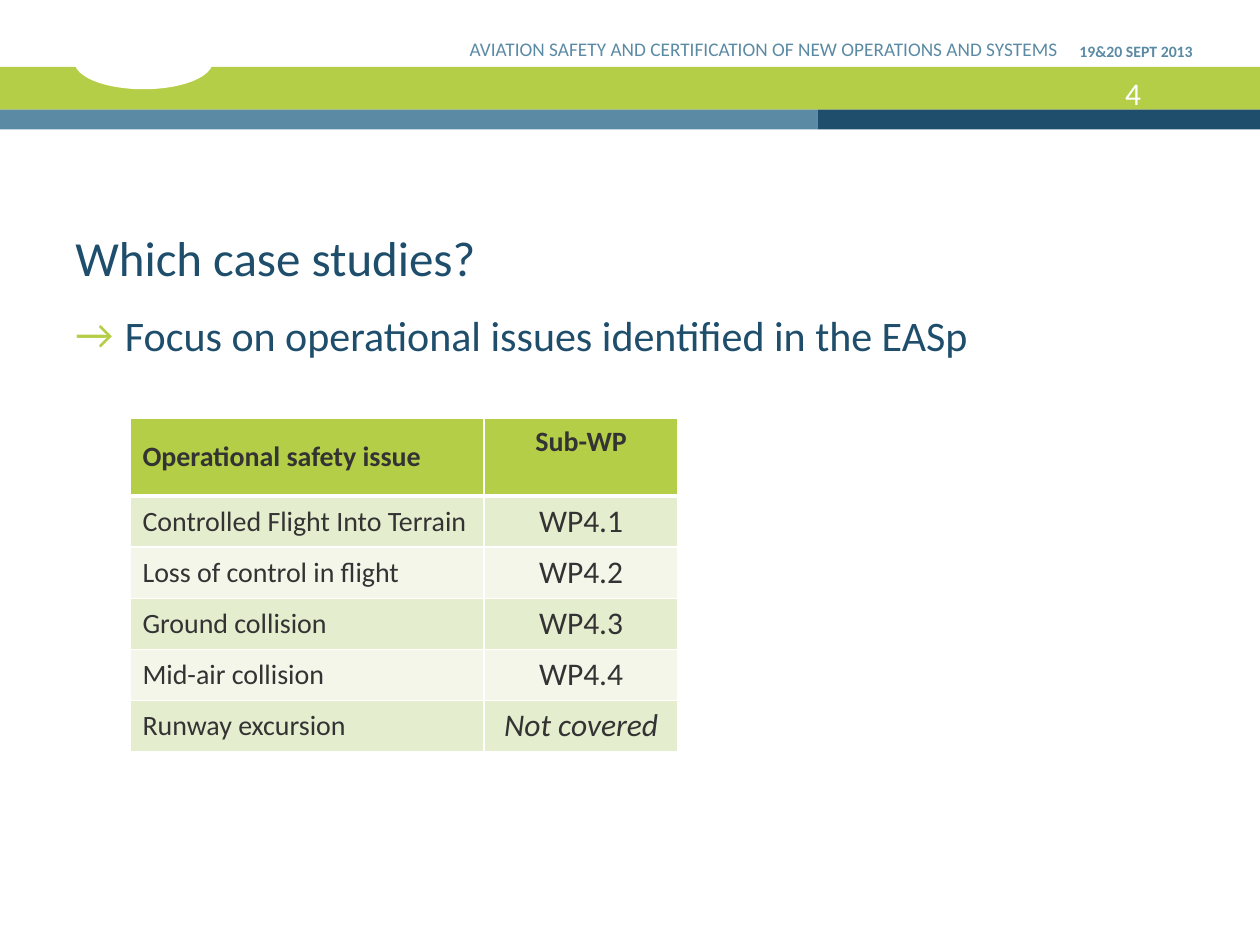
from lxml import etree
from pptx import Presentation, util as u
from pptx.dml.color import RGBColor
from pptx.enum import shapes, text
from pptx.oxml.ns import qn

THEME = dict(
    font="Calibri", lime="B5CE48", navy="1E4E6B", steel="5B8AA5",
    white="FFFFFF", ink="333333", bands=("E5EDCF", "F3F6E9"),
    title=28, body=24, page=18, event=11, date=9, label=16, value=18,
)
T = THEME
SHAPE, ALIGN, ANCHOR = shapes.MSO_SHAPE, text.PP_ALIGN, text.MSO_ANCHOR

# Kind, colour, (left, top, width, height) in cm
BANNER = [
    (SHAPE.RECTANGLE, T["lime"], (0, 1.35, 25.4, 0.86)),
    (SHAPE.RECTANGLE, T["navy"], (16.48, 2.21, 8.92, 0.4)),
    (SHAPE.RECTANGLE, T["steel"], (0, 2.21, 16.48, 0.4)),
    (SHAPE.OVAL, T["white"], (1.5, 0.69, 2.79, 1.11)),
]

# Wording, place in cm, size, colour, options
HEADER = dict(anchor=ANCHOR.BOTTOM, right=0)
TEXTS = [
    ("4", (22.43, 1.37, 2.11, 1.02), T["page"], T["white"], {}),
    ("19&20 SEPT 2013", (21.51, 0.08, 3.02, 1.27), T["date"], T["steel"],
     dict(HEADER, bold=True)),
    ("AVIATION SAFETY AND CERTIFICATION OF NEW OPERATIONS AND SYSTEMS",
     (7.92, 0.08, 13.41, 1.27), T["event"], T["steel"],
     dict(HEADER, align=ALIGN.RIGHT)),
    ("Which case studies?", (1.27, 2.92, 22.86, 2.97), T["title"], T["navy"],
     dict(anchor=ANCHOR.BOTTOM)),
    ("Focus on operational issues identified in the EASp",
     (1.27, 6.12, 22.86, 12.19), T["body"], T["navy"], dict(bullet="→")),
]

ISSUES = [
    ("Operational safety issue", "Sub-WP"),
    ("Controlled Flight Into Terrain", "WP4.1"),
    ("Loss of control in flight", "WP4.2"),
    ("Ground collision", "WP4.3"),
    ("Mid-air collision", "WP4.4"),
    ("Runway excursion", "Not covered"),
]
TABLE_AT = (2.62, 8.43)
COL_WIDTHS = (7.14, 3.91)
HEAD_HEIGHT, ROW_HEIGHT = 1.57, 1.03


def cm(values):
    return [u.Cm(v) for v in values]


def style(p, size, color, bold=False, italic=False, align=ALIGN.LEFT):
    p.alignment = align
    for r in p.runs:
        f = r.font
        f.name, f.size, f.bold, f.italic = T["font"], u.Pt(size), bold, italic
        f.color.rgb = RGBColor.from_string(color)


def fill(obj, color):
    obj.fill.solid()
    obj.fill.fore_color.rgb = RGBColor.from_string(color)


def add_bullet(p, char, color, indent):
    pPr = p._p.get_or_add_pPr()
    pPr.set("marL", str(indent))
    pPr.set("indent", str(-indent))
    clr = etree.SubElement(pPr, qn("a:buClr"))
    etree.SubElement(clr, qn("a:srgbClr"), val=color)
    etree.SubElement(pPr, qn("a:buFont"), typeface=T["font"])
    etree.SubElement(pPr, qn("a:buChar"), char=char)


def add_text(s, words, place, size, color, anchor=ANCHOR.TOP, right=0.25,
             bullet=None, **look):
    tf = s.shapes.add_textbox(*cm(place)).text_frame
    tf.word_wrap = True
    tf.vertical_anchor = anchor
    tf.margin_right = u.Cm(right)
    tf.text = words
    p = tf.paragraphs[0]
    if bullet:
        add_bullet(p, bullet, T["lime"], u.Cm(1))
    style(p, size, color, **look)


def set_borders(cell, **widths):
    """Draw white cell borders; widths are in points, keyed L, R, T, B."""
    tcPr = cell._tc.get_or_add_tcPr()
    for side, width in widths.items():
        ln = etree.SubElement(tcPr, qn(f"a:ln{side}"), w=str(u.Pt(width)))
        solid = etree.SubElement(ln, qn("a:solidFill"))
        etree.SubElement(solid, qn("a:srgbClr"), val=T["white"])


def add_issue_table(s):
    height = HEAD_HEIGHT + ROW_HEIGHT * (len(ISSUES) - 1)
    place = cm((*TABLE_AT, sum(COL_WIDTHS), height))
    tbl = s.shapes.add_table(len(ISSUES), len(COL_WIDTHS), *place).table
    for col, width in zip(tbl.columns, COL_WIDTHS):
        col.width = u.Cm(width)
    for i, row in enumerate(ISSUES):
        head = i == 0
        tbl.rows[i].height = u.Cm(HEAD_HEIGHT if head else ROW_HEIGHT)
        for j, words in enumerate(row):
            cell = tbl.cell(i, j)
            set_borders(cell, L=1, R=1, T=3 if i == 1 else 1, B=3 if head else 1)
            fill(cell, T["lime"] if head else T["bands"][(i - 1) % 2])
            cell.vertical_anchor = ANCHOR.TOP if j else ANCHOR.MIDDLE
            cell.text_frame.text = words
            style(cell.text_frame.paragraphs[0],
                  T["value"] if j and not head else T["label"], T["ink"],
                  bold=head, italic=words == "Not covered",
                  align=ALIGN.CENTER if j else ALIGN.LEFT)


def main():
    prs = Presentation()
    prs.slide_width, prs.slide_height = cm((25.4, 19.05))
    s = prs.slides.add_slide(prs.slide_layouts[6])
    for kind, color, place in BANNER:
        sp = s.shapes.add_shape(kind, *cm(place))
        sp.shadow.inherit = False
        fill(sp, color)
        sp.line.fill.background()
    for words, place, size, color, options in TEXTS:
        add_text(s, words, place, size, color, **options)
    add_issue_table(s)
    prs.save("out.pptx")


if __name__ == "__main__":
    main()
